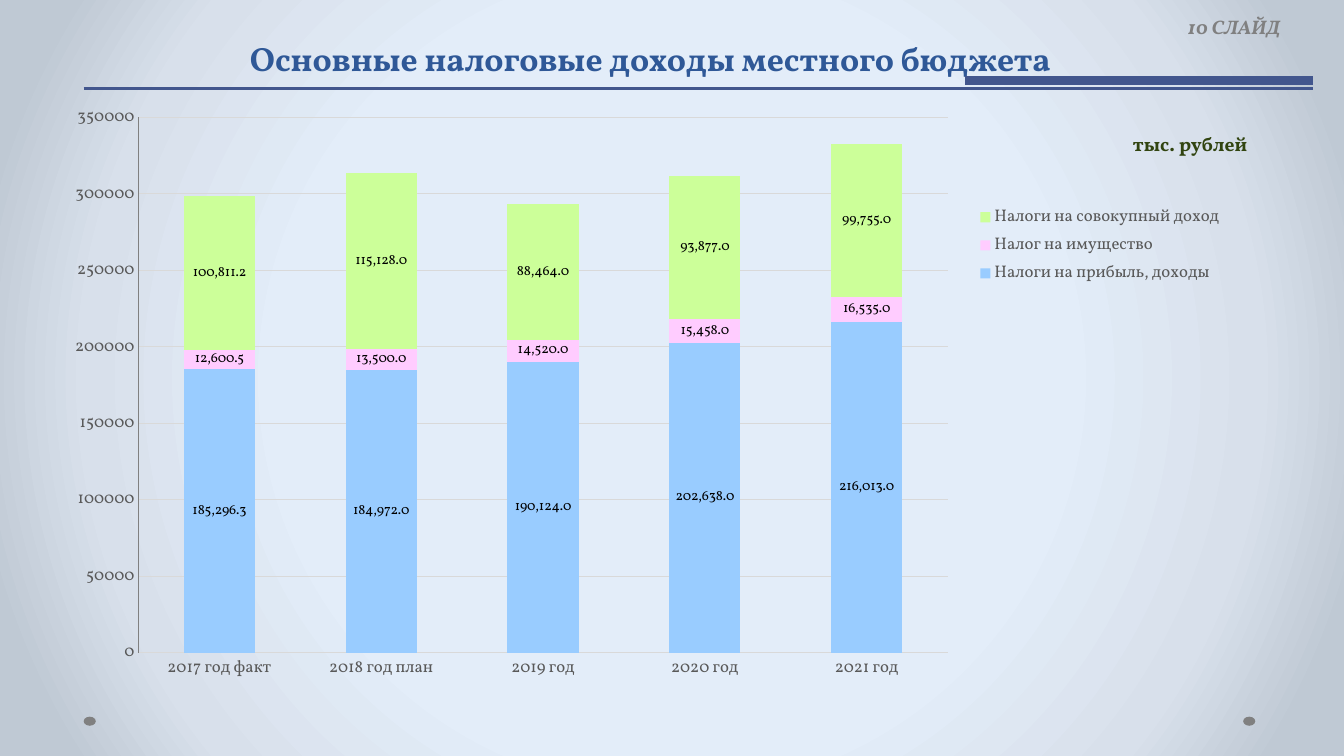
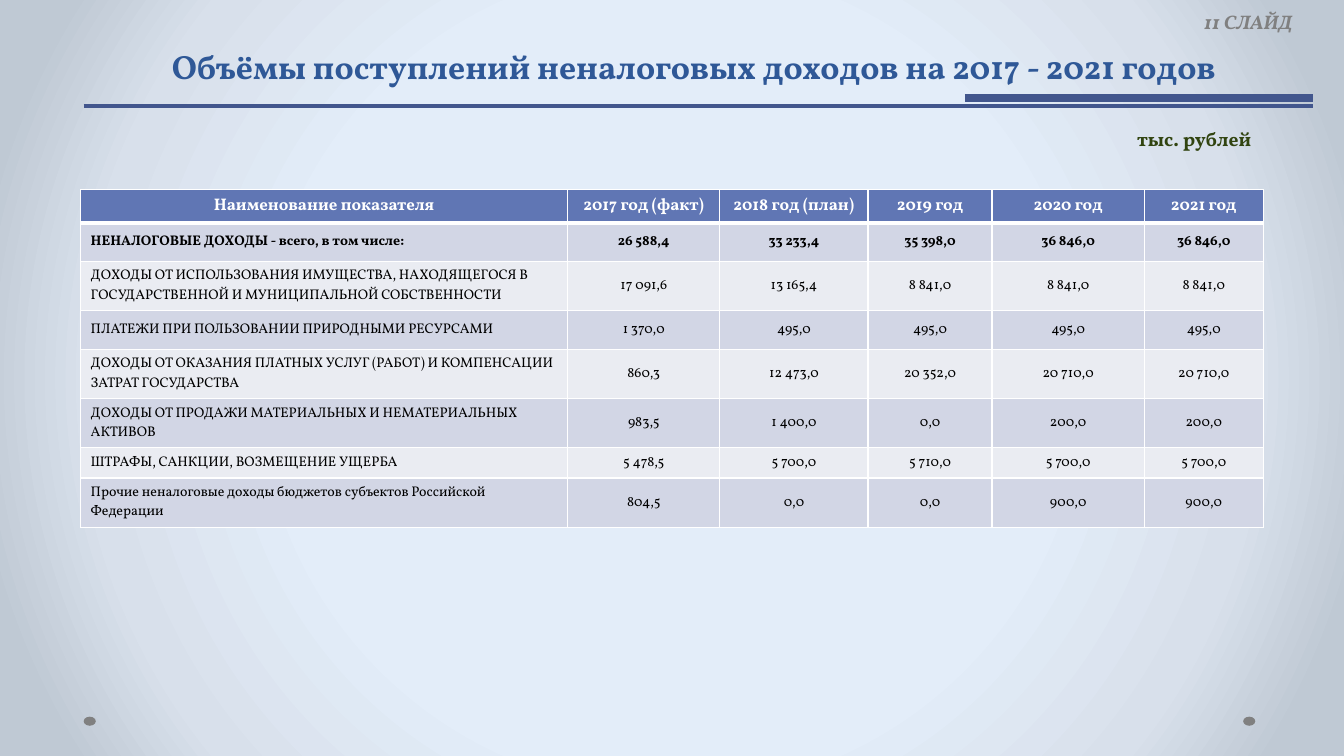
from dataclasses import dataclass

from pptx import Presentation
from pptx.chart.data import CategoryChartData
from pptx.dml.color import RGBColor
from pptx.enum.chart import XL_CHART_TYPE as ChartType
from pptx.enum.chart import XL_LEGEND_POSITION as LegendPosition
from pptx.enum.chart import XL_TICK_MARK as TickMark
from pptx.enum.shapes import MSO_CONNECTOR as Connector
from pptx.enum.shapes import MSO_SHAPE as ShapeType
from pptx.enum.text import MSO_ANCHOR as Anchor
from pptx.enum.text import MSO_AUTO_SIZE as AutoSize
from pptx.enum.text import PP_ALIGN as Align
from pptx.oxml import parse_xml
from pptx.oxml.ns import nsdecls, qn
from pptx.util import Inches, Pt


@dataclass(frozen=True)
class Theme:
    font: str = "Vollkorn"
    title: str = "2F5897"
    rule: str = "42568D"
    units: str = "314410"
    muted: str = "808080"
    axis_text: str = "595959"
    grid: str = "D9D9D9"
    black: str = "000000"
    white: str = "FFFFFF"
    header: str = "6076B4"
    bands: tuple = ("D2D6E5", "EAECF2")
    series: tuple = ("99CCFF", "FFCCFF", "CCFF99")
    background: tuple = ((50, "E3EDF9"), (76, "D8E0EB"), (92, "BFC9D4"))
    title_size: int = 24
    note_size: int = 14
    label_size: int = 12
    body_size: int = 10


@dataclass(frozen=True)
class Box:
    left: float
    top: float
    width: float
    height: float

    def inches(self):
        return [Inches(n) for n in (self.left, self.top, self.width, self.height)]


THEME = Theme()

TAX_YEARS = ("2017 год факт", "2018 год план", "2019 год", "2020 год", "2021 год")
TAX_SERIES = (
    ("Налоги на прибыль, доходы", (185296.3, 184972, 190124, 202638, 216013)),
    ("Налог на имущество", (12600.5, 13500, 14520, 15458, 16535)),
    ("Налоги на совокупный доход", (100811.2, 115128, 88464, 93877, 99755)),
)

COLUMN_WIDTHS = (4.83, 1.51, 1.47, 1.23, 1.51, 1.18)
ROW_HEIGHTS = (0.25, 0.38, 0.43, 0.39, 0.45, 0.47, 0.3, 0.38)
REVENUE_ROWS = (
    ("Наименование показателя", "2017 год (факт)", "2018 год (план)",
     "2019 год", "2020 год", "2021 год"),
    ("НЕНАЛОГОВЫЕ ДОХОДЫ - всего, в том числе:",
     "26 588,4", "33 233,4", "35 398,0", "36 846,0", "36 846,0"),
    ("ДОХОДЫ ОТ ИСПОЛЬЗОВАНИЯ ИМУЩЕСТВА, НАХОДЯЩЕГОСЯ В "
     "ГОСУДАРСТВЕННОЙ И МУНИЦИПАЛЬНОЙ СОБСТВЕННОСТИ",
     "17 091,6", "13 165,4", "8 841,0", "8 841,0", "8 841,0"),
    ("ПЛАТЕЖИ ПРИ ПОЛЬЗОВАНИИ ПРИРОДНЫМИ РЕСУРСАМИ",
     "1 370,0", "495,0", "495,0", "495,0", "495,0"),
    ("ДОХОДЫ ОТ ОКАЗАНИЯ ПЛАТНЫХ УСЛУГ (РАБОТ) И КОМПЕНСАЦИИ ЗАТРАТ ГОСУДАРСТВА",
     "860,3", "12 473,0", "20 352,0", "20 710,0", "20 710,0"),
    ("ДОХОДЫ ОТ ПРОДАЖИ МАТЕРИАЛЬНЫХ И НЕМАТЕРИАЛЬНЫХ АКТИВОВ",
     "983,5", "1 400,0", "0,0", "200,0", "200,0"),
    ("ШТРАФЫ, САНКЦИИ, ВОЗМЕЩЕНИЕ УЩЕРБА",
     "5 478,5", "5 700,0", "5 710,0", "5 700,0", "5 700,0"),
    ("Прочие неналоговые доходы бюджетов субъектов Российской Федерации",
     "804,5", "0,0", "0,0", "900,0", "900,0"),
)


def rgb(color):
    return RGBColor.from_string(color)


def style_font(font, size, color, bold=False, italic=False):
    font.name = THEME.font
    font.size = Pt(size)
    font.color.rgb = rgb(color)
    font.bold = bold
    font.italic = italic


def add_run(paragraph, text, size, color, bold=False, italic=False):
    run = paragraph.add_run()
    run.text = text
    style_font(run.font, size, color, bold, italic)


def style_master(master):
    master.background.fill.solid()
    properties = master.element.find(".//" + qn("p:bgPr"))
    stops = "".join(
        f'<a:gs pos="{position * 1000}"><a:srgbClr val="{color}"/></a:gs>'
        for position, color in THEME.background
    )
    gradient = parse_xml(
        f'<a:gradFill {nsdecls("a")} rotWithShape="1"><a:gsLst>{stops}</a:gsLst>'
        '<a:path path="circle"><a:fillToRect l="50000" t="50000" r="50000" b="50000"/>'
        "</a:path></a:gradFill>"
    )
    properties.replace(properties.find(qn("a:solidFill")), gradient)


def add_dots(slide):
    for left in (12.33, 0.83):
        dot = slide.shapes.add_shape(ShapeType.OVAL, *Box(left, 7.11, 0.12, 0.09).inches())
        dot.shadow.inherit = False
        dot.fill.solid()
        dot.fill.fore_color.rgb = rgb(THEME.muted)
        dot.line.fill.background()


def set_title(slide, box, text, line_spacing=None):
    title = slide.shapes.title
    title.left, title.top, title.width, title.height = box.inches()
    frame = title.text_frame
    frame.auto_size = AutoSize.NONE
    frame.word_wrap = True
    frame.vertical_anchor = Anchor.BOTTOM
    paragraph = frame.paragraphs[0]
    paragraph.alignment = Align.CENTER
    if line_spacing:
        paragraph.line_spacing = Pt(line_spacing)
    add_run(paragraph, text, THEME.title_size, THEME.title, bold=True)


def add_note(slide, box, text, color, align, italic=False, inset=0.1):
    frame = slide.shapes.add_textbox(*box.inches()).text_frame
    frame.word_wrap = True
    frame.margin_left = Inches(inset)
    paragraph = frame.paragraphs[0]
    paragraph.alignment = align
    add_run(paragraph, text, THEME.note_size, color, bold=True, italic=italic)


def add_slide_number(slide, left, top, text):
    add_note(slide, Box(left, top, 1.31, 0.34), text, THEME.muted, Align.LEFT,
             italic=True, inset=0.17)


def add_units(slide, left, top):
    add_note(slide, Box(left, top, 1.72, 0.34), "тыс. рублей", THEME.units, Align.RIGHT)


def add_title_rules(slide, top):
    for left, offset, weight in ((0.83, 0.08, 2.5), (9.57, 0, 6)):
        y = Inches(top + offset)
        rule = slide.shapes.add_connector(
            Connector.STRAIGHT, Inches(left), y, Inches(13.02), y
        )
        rule.line.color.rgb = rgb(THEME.rule)
        rule.line.width = Pt(weight)
        rule.element.spPr.append(parse_xml(f'<a:effectLst {nsdecls("a")}/>'))


def set_chart_layout(parent, index, box, target=""):
    previous = parent.find(qn("c:layout"))
    if previous is not None:
        parent.remove(previous)
    parent.insert(index, parse_xml(
        f'<c:layout {nsdecls("c")}><c:manualLayout>{target}'
        '<c:xMode val="edge"/><c:yMode val="edge"/>'
        f'<c:x val="{box.left}"/><c:y val="{box.top}"/>'
        f'<c:w val="{box.width}"/><c:h val="{box.height}"/>'
        "</c:manualLayout></c:layout>"
    ))


def style_axis(axis, line_color):
    axis.major_tick_mark = axis.minor_tick_mark = TickMark.NONE
    axis.format.line.color.rgb = rgb(line_color)
    axis.format.line.width = Pt(1)
    style_font(axis.tick_labels.font, THEME.label_size, THEME.axis_text)


def add_tax_chart(slide, box):
    data = CategoryChartData()
    data.categories = TAX_YEARS
    for name, values in TAX_SERIES:
        data.add_series(name, values)
    chart = slide.shapes.add_chart(ChartType.COLUMN_STACKED, *box.inches(), data).chart
    chart.has_title = False
    style_font(chart.font, THEME.body_size, THEME.black)

    plot = chart.plots[0]
    plot.gap_width = 127
    plot.overlap = 100
    plot.vary_by_categories = False
    for series, color in zip(plot.series, THEME.series):
        series.format.fill.solid()
        series.format.fill.fore_color.rgb = rgb(color)
        labels = series.data_labels
        labels.show_value = True
        labels.number_format = "#,##0.0"
        labels.number_format_is_linked = False
        style_font(labels.font, THEME.body_size, THEME.black)

    style_axis(chart.category_axis, THEME.grid)
    value_axis = chart.value_axis
    style_axis(value_axis, THEME.muted)
    value_axis.minimum_scale = 0
    value_axis.maximum_scale = 350000
    value_axis.major_unit = 50000
    value_axis.tick_labels.number_format = "General"
    value_axis.tick_labels.number_format_is_linked = False
    grid_line = value_axis.major_gridlines.format.line
    grid_line.color.rgb = rgb(THEME.grid)
    grid_line.width = Pt(0.75)

    chart.has_legend = True
    chart.legend.position = LegendPosition.RIGHT
    chart.legend.include_in_layout = False
    style_font(chart.legend.font, THEME.label_size, THEME.axis_text)
    plot_area = chart.element.find(".//" + qn("c:plotArea"))
    legend = chart.element.find(".//" + qn("c:legend"))
    set_chart_layout(plot_area, 0, Box(0.07, 0.04, 0.69, 0.9),
                     '<c:layoutTarget val="inner"/>')
    set_chart_layout(legend, 1, Box(0.78, 0.18, 0.22, 0.15))


def set_borders(cell, top, bottom):
    properties = cell._tc.get_or_add_tcPr()
    sides = (("L", 1), ("R", 1), ("T", top), ("B", bottom))
    for index, (side, weight) in enumerate(sides):
        properties.insert(index, parse_xml(
            f'<a:ln{side} {nsdecls("a")} w="{Pt(weight)}"><a:solidFill>'
            f'<a:srgbClr val="{THEME.white}"/></a:solidFill></a:ln{side}>'
        ))


def fill_cell(cell, text, row, column):
    is_header = row == 0
    cell.fill.solid()
    cell.fill.fore_color.rgb = rgb(THEME.header if is_header else THEME.bands[(row - 1) % 2])
    cell.vertical_anchor = Anchor.MIDDLE
    set_borders(cell, top=3 if row == 1 else 1, bottom=3 if is_header else 1)
    paragraph = cell.text_frame.paragraphs[0]
    paragraph.alignment = Align.CENTER if is_header or column else Align.LEFT
    size = THEME.label_size if is_header else THEME.body_size
    color = THEME.white if is_header else THEME.black
    add_run(paragraph, text, size, color, bold=row < 2)


def add_revenue_table(slide, box):
    table = slide.shapes.add_table(
        len(ROW_HEIGHTS), len(COLUMN_WIDTHS), *box.inches()
    ).table
    for column, width in zip(table.columns, COLUMN_WIDTHS):
        column.width = Inches(width)
    for row, height in zip(table.rows, ROW_HEIGHTS):
        row.height = Inches(height)
    for row, texts in enumerate(REVENUE_ROWS):
        for column, text in enumerate(texts):
            fill_cell(table.cell(row, column), text, row, column)


def build_tax_slide(slide):
    add_dots(slide)
    set_title(slide, Box(1.95, 0.1, 9, 0.73),
              "Основные налоговые доходы местного бюджета", line_spacing=58)
    add_tax_chart(slide, Box(0.56, 0.93, 11.63, 5.9))
    add_slide_number(slide, 11.61, 0.1, "10 СЛАЙД")
    add_units(slide, 10.75, 1.26)
    add_title_rules(slide, 0.8)


def build_revenue_slide(slide):
    add_dots(slide)
    set_title(slide, Box(0.83, 0.3, 12.1, 0.61),
              "Объёмы поступлений неналоговых доходов на 2017 - 2021 годов")
    add_revenue_table(slide, Box(0.8, 1.88, 11.72, 3.15))
    add_units(slide, 10.79, 1.21)
    add_slide_number(slide, 11.77, 0.05, "11 СЛАЙД")
    add_title_rules(slide, 0.97)


def main():
    presentation = Presentation()
    presentation.slide_width = Inches(13.33)
    presentation.slide_height = Inches(7.5)
    style_master(presentation.slide_master)
    title_only = presentation.slide_layouts[5]
    for build in (build_tax_slide, build_revenue_slide):
        build(presentation.slides.add_slide(title_only))
    presentation.save("out.pptx")


if __name__ == "__main__":
    main()
